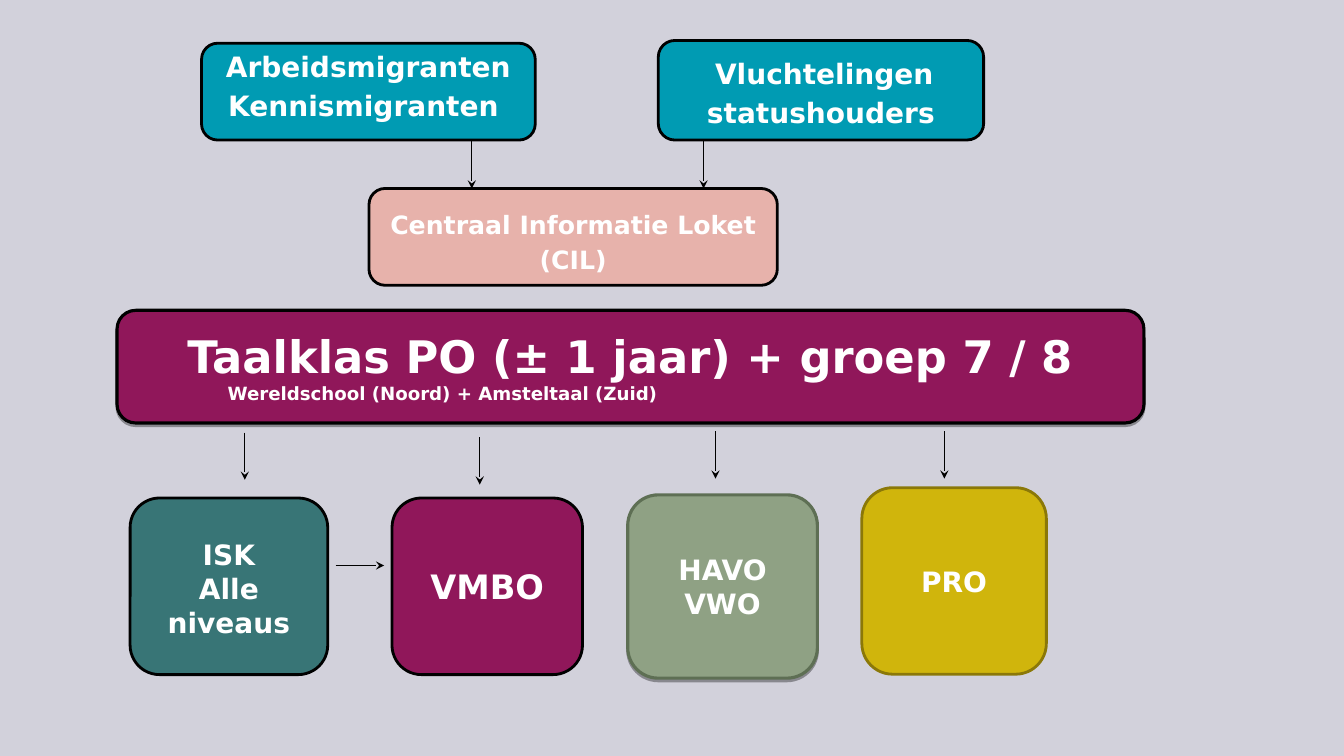
from lxml import etree
from pptx import Presentation
from pptx.dml.color import RGBColor
from pptx.enum.shapes import MSO_CONNECTOR, MSO_SHAPE
from pptx.enum.text import MSO_ANCHOR, PP_ALIGN
from pptx.oxml.ns import qn
from pptx.util import Cm, Pt

ROUND = MSO_SHAPE.FLOWCHART_ALTERNATE_PROCESS
LINE = MSO_CONNECTOR.STRAIGHT
MIDDLE = MSO_ANCHOR.MIDDLE
CENTER, LEFT = PP_ALIGN.CENTER, PP_ALIGN.LEFT

BLACK = RGBColor(0x00, 0x00, 0x00)
WHITE = RGBColor(0xFF, 0xFF, 0xFF)
GREY = RGBColor(0xD2, 0xD1, 0xDB)
CYAN = RGBColor(0x00, 0x9B, 0xB3)
PINK = RGBColor(0xE7, 0xB2, 0xAB)
PLUM = RGBColor(0x90, 0x17, 0x5A)
TEAL = RGBColor(0x38, 0x75, 0x76)
SAGE = RGBColor(0x8F, 0xA1, 0x84)
MOSS = RGBColor(0x5E, 0x6F, 0x54)
GOLD = RGBColor(0xD0, 0xB5, 0x0C)
OCHRE = RGBColor(0x8B, 0x78, 0x08)


class Chart:
    """Holds the slide and the style of its boxes and arrows."""

    font = "DejaVu Sans"
    drop = 1.19  # length of every downward arrow

    def __init__(self, slide):
        self.slide = slide
        fill = slide.background.fill
        fill.solid()
        fill.fore_color.rgb = GREY

    def box(self, place, fill, edge=BLACK, width=2, shade=False):
        shape = self.slide.shapes.add_shape(ROUND, *map(Cm, place))
        shape.shadow.inherit = False
        shape.fill.solid()
        shape.fill.fore_color.rgb = fill
        shape.line.color.rgb = edge
        shape.line.width = Pt(width)
        if shade:
            self.shade(shape)
        return shape

    def shade(self, shape):
        effects = shape._element.spPr.find(qn("a:effectLst"))
        shadow = etree.SubElement(effects, qn("a:outerShdw"), blurRad="0",
                                  dist=str(Pt(1.8)), dir="5400000", rotWithShape="0")
        color = etree.SubElement(shadow, qn("a:srgbClr"), val=str(BLACK))
        etree.SubElement(color, qn("a:alpha"), val="35000")

    def text(self, shape, lines, space=1.0, top=0.13, low=0.13):
        """Each line is a list of (words, size) runs."""
        frame = shape.text_frame
        frame.word_wrap = True
        frame.vertical_anchor = MIDDLE
        frame.margin_left = frame.margin_right = Cm(0.25)
        frame.margin_top, frame.margin_bottom = Cm(top), Cm(low)
        for i, runs in enumerate(lines):
            para = frame.add_paragraph() if i else frame.paragraphs[0]
            para.alignment = CENTER
            para.line_spacing = space
            for words, size in runs:
                run = para.add_run()
                run.text = words
                run.font.name = self.font
                run.font.size = Pt(size)
                run.font.bold = True
                run.font.color.rgb = WHITE
        return frame

    def arrow(self, x, y, across=0.0, down=0.0):
        line = self.slide.shapes.add_connector(
            LINE, Cm(x), Cm(y), Cm(x + across), Cm(y + down))
        line.line.color.rgb = BLACK
        line.line.width = Pt(0.75)
        etree.SubElement(line.line._get_or_add_ln(), qn("a:tailEnd"), type="stealth")
        etree.SubElement(line._element.spPr, qn("a:effectLst"))


def main():
    deck = Presentation()
    deck.slide_width, deck.slide_height = Cm(33.87), Cm(19.05)
    chart = Chart(deck.slides.add_slide(deck.slide_layouts[6]))

    # Language class
    band = chart.box((2.95, 7.82, 25.88, 2.84), PLUM, width=2.25, shade=True)
    frame = chart.text(band, [
        [("Taalklas PO (± 1 jaar) + groep 7 / 8", 32)],
        [("Wereldschool (Noord) + Amsteltaal (Zuid)", 13)]])
    schools = frame.paragraphs[1]
    schools.alignment = LEFT
    schools._p.get_or_add_pPr().set("marL", str(Cm(2.4)))

    # School types
    isk = chart.box((3.28, 12.55, 4.98, 4.45), TEAL)
    chart.text(isk, [[("ISK", 20)], [("Alle niveaus", 20)]], top=0.23)
    vmbo = chart.box((9.88, 12.55, 4.8, 4.45), PLUM)
    chart.text(vmbo, [[("VMBO", 24)]])
    havo = chart.box((15.82, 12.47, 4.78, 4.62), SAGE, MOSS, 2.25, True)
    chart.text(havo, [[("HAVO", 20)], [("VWO", 20)]])
    pro = chart.box((21.72, 12.29, 4.65, 4.7), GOLD, OCHRE)
    chart.text(pro, [[("PRO", 20)]])

    # Arrows
    for x, y in ((12.09, 11.02), (23.8, 10.87), (6.17, 10.9), (18.03, 10.87),
                 (11.89, 3.56), (17.73, 3.56)):
        chart.arrow(x, y, down=chart.drop)
    chart.arrow(8.46, 14.25, across=1.22)

    # Information desk
    desk = chart.box((9.3, 4.75, 10.29, 2.44), PINK)
    chart.text(desk, [[("Centraal Informatie Loket (CIL)", 18)]], 1.15, top=0.28)

    # Newcomers
    work = chart.box((5.08, 1.09, 8.41, 2.44), CYAN)
    chart.text(work, [[("Arbeidsmigranten", 20)], [("Kennismigranten ", 20)]],
               1.15, top=0, low=0.41)
    asylum = chart.box((16.59, 1.02, 8.2, 2.51), CYAN)
    chart.text(asylum, [[(" ", 14), ("Vluchtelingen", 20)], [("statushouders", 20)]],
               1.15)

    deck.save("out.pptx")


if __name__ == "__main__":
    main()
